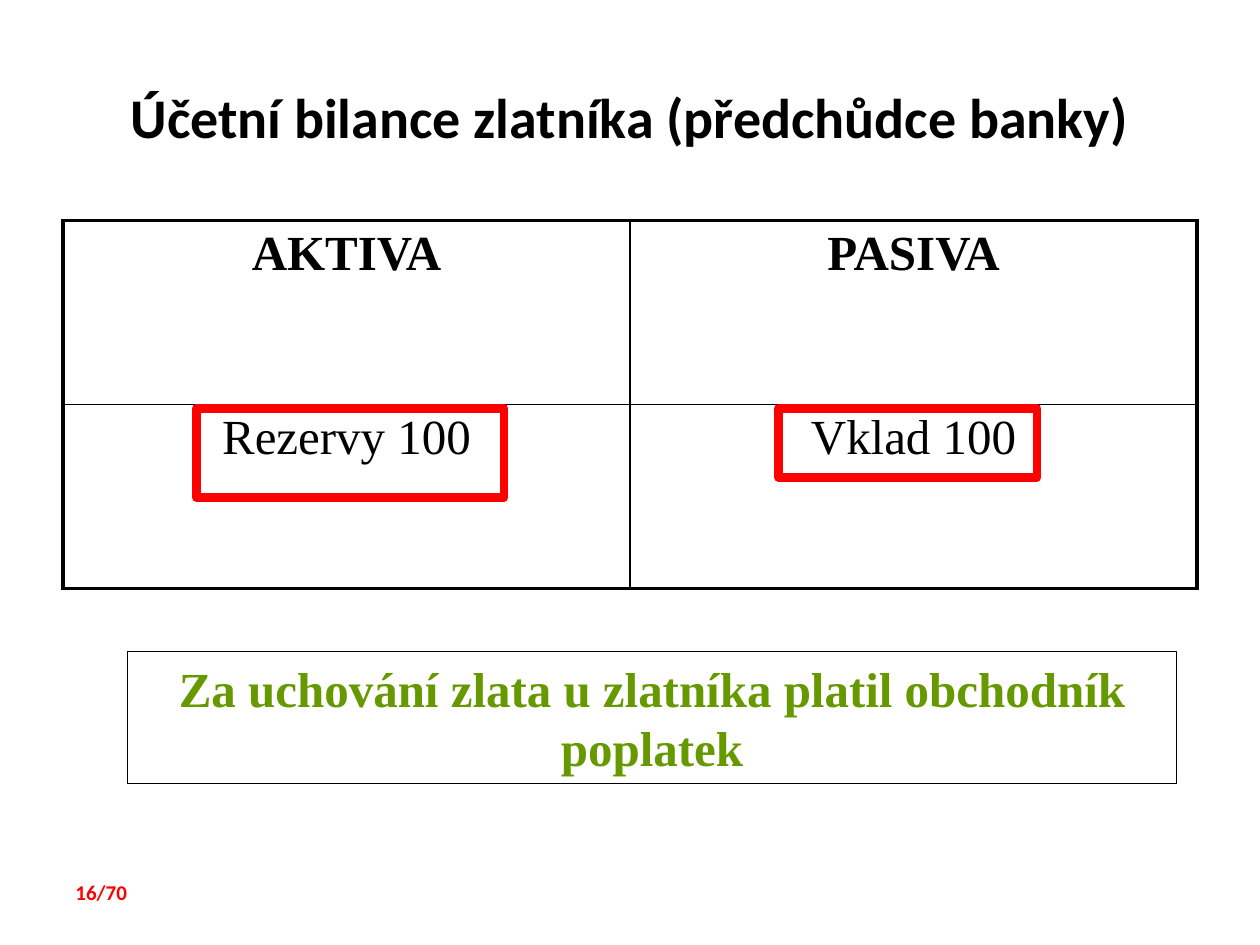
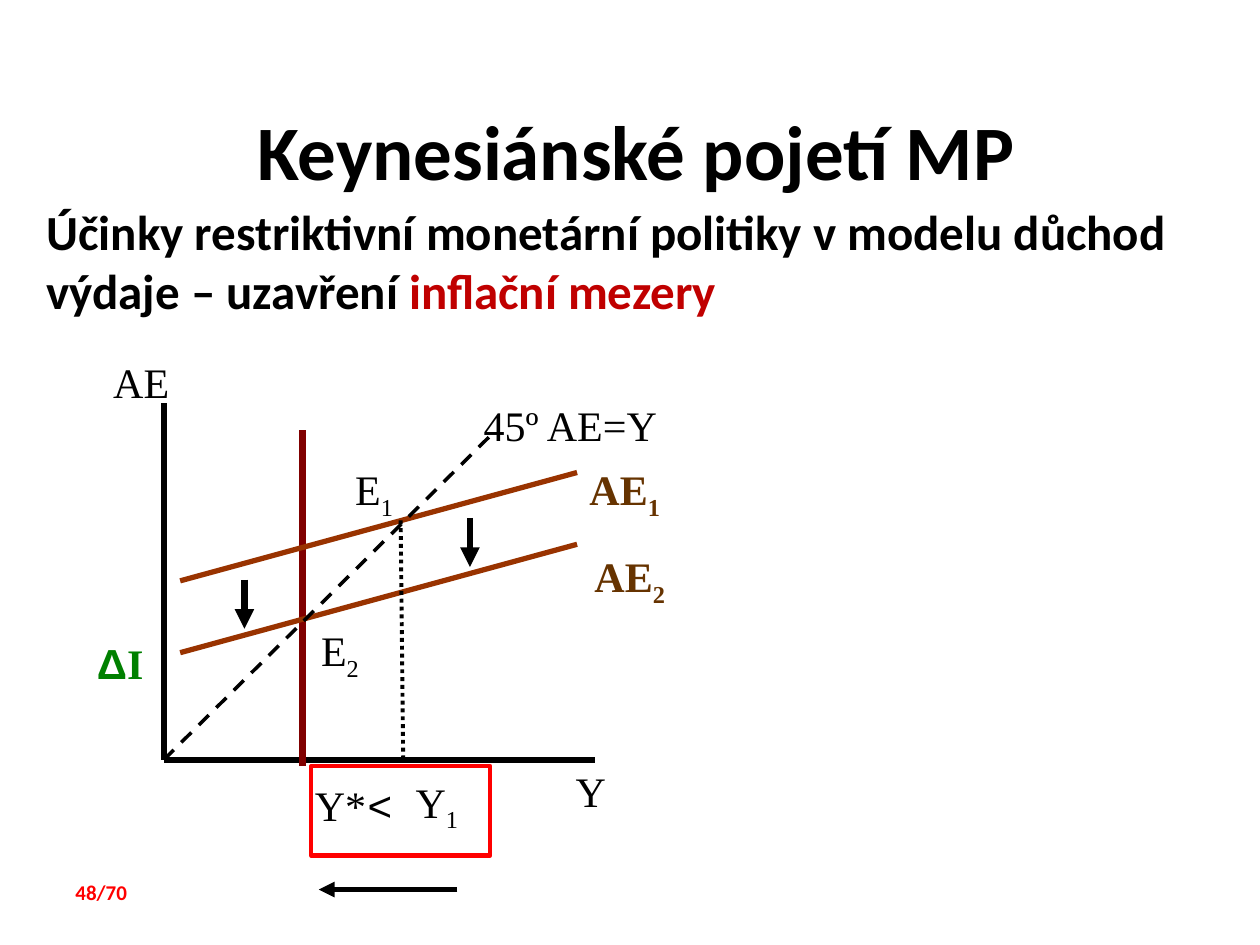
from dataclasses import dataclass

from pptx import Presentation
from pptx import util as u
from pptx.dml.color import RGBColor
from pptx.enum import dml, shapes, text
from pptx.oxml.ns import qn
from lxml import etree

SERIF, SANS, ARIAL = "Times New Roman", "Calibri", "Arial"
BLACK, RED, DARK_RED = "000000", "FF0000", "C00000"
GREEN, OLIVE, BROWN = "008000", "669900", "663300"
MAROON, RUST = "800000", "993300"
TOTAL_SLIDES = 70
CENTER = text.PP_ALIGN.CENTER


@dataclass
class Run:
    text: str
    size: float = 24
    font: str = SERIF
    color: str = BLACK
    bold: bool = False
    sub: bool = False


@dataclass
class Label:
    x: float
    y: float
    runs: list[Run]
    w: float = 0.92
    h: float = 0.5


@dataclass
class Line:
    x1: float
    y1: float
    x2: float
    y2: float
    width: float
    color: str = BLACK
    dash: dml.MSO_LINE | None = None
    arrow: bool = False


def rgb(color: str) -> RGBColor:
    return RGBColor.from_string(color)


def inches(*values: float) -> list[u.Length]:
    return [u.Inches(v) for v in values]


def write(tf, runs: list[Run], align=None) -> None:
    """Fill a text frame with one paragraph of formatted runs."""
    p = tf.paragraphs[0]
    p.alignment = align
    for run in runs:
        r = p.add_run()
        r.text = run.text
        r.font.size, r.font.name, r.font.bold = u.Pt(run.size), run.font, run.bold
        r.font.color.rgb = rgb(run.color)
        if run.sub:
            r.font._element.set("baseline", "-25000")


def add_label(s, label: Label, align=None, anchor=text.MSO_ANCHOR.TOP) -> None:
    sp = s.shapes.add_textbox(*inches(label.x, label.y, label.w, label.h))
    tf = sp.text_frame
    tf.word_wrap = True
    tf.vertical_anchor = anchor
    write(tf, label.runs, align)


def add_frame(s, x: float, y: float, w: float, h: float, color: str, width: float):
    """Unfilled outlined rectangle."""
    sp = s.shapes.add_shape(shapes.MSO_SHAPE.RECTANGLE, *inches(x, y, w, h))
    sp.shadow.inherit = False
    sp.fill.background()
    sp.line.color.rgb = rgb(color)
    sp.line.width = u.Pt(width)
    return sp


def add_line(s, line: Line) -> None:
    sp = s.shapes.add_connector(
        shapes.MSO_CONNECTOR.STRAIGHT, *inches(line.x1, line.y1, line.x2, line.y2))
    sp.line.color.rgb = rgb(line.color)
    sp.line.width = u.Pt(line.width)
    if line.dash:
        sp.line.dash_style = line.dash
    if line.arrow:
        etree.SubElement(sp.line._get_or_add_ln(), qn("a:tailEnd"), type="triangle")
    etree.SubElement(sp._element.spPr, qn("a:effectLst"))


def set_borders(cell, widths: dict[str, float]) -> None:
    """Black cell borders; the side elements go ahead of the fill."""
    tc_pr = cell._tc.get_or_add_tcPr()
    for i, (side, width) in enumerate(widths.items()):
        ln = etree.Element(qn(f"a:ln{side}"), w=str(u.Pt(width)))
        fill = etree.SubElement(ln, qn("a:solidFill"))
        etree.SubElement(fill, qn("a:srgbClr"), val=BLACK)
        tc_pr.insert(i, ln)


def add_slide(prs, number: int, title: str, size: float, x: float, y: float, w: float):
    """Blank slide with the shared title and page number."""
    s = prs.slides.add_slide(prs.slide_layouts[6])
    add_label(s, Label(x, y, [Run(title, size, SANS, bold=True)], w, 1.25),
              CENTER, text.MSO_ANCHOR.MIDDLE)
    page = Run(f"{number}/{TOTAL_SLIDES}", 12, SANS, RED, True)
    add_label(s, Label(0.5, 6.93, [page], h=0.3))
    return s


def balance_slide(prs) -> None:
    s = add_slide(prs, 16, "Účetní bilance zlatníka (předchůdce banky)", 32, 0.5, 0.3, 9)

    # Balance sheet: thick outside, thin inside
    rows = [["AKTIVA", "PASIVA"], ["Rezervy 100", "Vklad 100"]]
    thick, thin = 2.25, 1
    table = s.shapes.add_table(2, 2, *inches(0.5, 1.75, 9, 2.92)).table
    table.first_row = table.horz_banding = False
    for i, row in enumerate(rows):
        for j, entry in enumerate(row):
            cell = table.cell(i, j)
            cell.fill.background()
            write(cell.text_frame, [Run(entry, 28, bold=i == 0)], CENTER)
            set_borders(cell, {"L": thin if j else thick, "R": thick if j else thin,
                               "T": thin if i else thick, "B": thick if i else thin})

    # Highlights around the entries
    add_frame(s, 6.18, 3.24, 2.05, 0.55, RED, 5)
    add_frame(s, 1.56, 3.24, 2.44, 0.71, RED, 5)

    # Conclusion
    tf = add_frame(s, 1.01, 5.17, 8.33, 1.05, BLACK, 0.75).text_frame
    tf.word_wrap = True
    fee = "Za uchování zlata u zlatníka platil obchodník poplatek"
    write(tf, [Run(fee, 28, color=OLIVE, bold=True)], CENTER)


def indexed(name: str, index: int, color: str = BLACK, bold: bool = False) -> list[Run]:
    return [Run(name, color=color, bold=bold),
            Run(str(index), color=color, bold=bold, sub=True)]


def keynes_slide(prs) -> None:
    s = add_slide(prs, 48, "Keynesiánské pojetí MP", 44, 0.05, 0.56, 10)
    add_label(s, Label(0.27, 1.55, [
        Run("Účinky restriktivní monetární politiky v modelu důchod výdaje – uzavření ",
            28, SANS, bold=True),
        Run("inflační mezery", 28, SANS, DARK_RED, True)], 9.45, 1.05))

    # Axes, potential output, expenditure lines and shift arrows
    origin_x, origin_y = 1.3, 6.03
    shift, arrow_length = 0.57, 0.39
    lines = [
        Line(origin_x, 3.2, origin_x, origin_y, 3.5),
        Line(origin_x, origin_y, 4.72, origin_y, 3.5),
        Line(2.4, 6.08, 2.4, 3.41, 4, MAROON),
        *(Line(1.43, 4.61 + dy, 4.58, 3.75 + dy, 3, RUST) for dy in (0, shift)),
        Line(origin_x, origin_y, 3.91, 3.44, 2, dash=dml.MSO_LINE.DASH),
        Line(3.18, 4.13, 3.2, origin_y, 2.25, dash=dml.MSO_LINE.ROUND_DOT),
        *(Line(x, y, x, y + arrow_length, 3.75, arrow=True)
          for x, y in ((1.94, 4.6), (3.73, 4.11))),
        Line(3.63, 7.06, 2.53, 7.06, 3, arrow=True),
    ]
    for line in lines:
        add_line(s, line)
    add_frame(s, 2.47, 6.08, 1.42, 0.71, RED, 2.5)

    # Diagram labels
    labels = [
        Label(0.8, 2.78, [Run("AE")]),
        Label(4.47, 6.03, [Run("Y")]),
        Label(2.4, 6.14, [Run("Y*")]),
        Label(2.82, 6.14, [Run("<", font=ARIAL)], 0.55),
        Label(3.2, 6.11, indexed("Y", 1)),
        Label(4.58, 3.63, indexed("AE", 1, BROWN, True), 0.94),
        Label(4.62, 4.32, indexed("AE", 2, BROWN, True), 0.94),
        Label(2.72, 3.63, indexed("E", 1)),
        Label(2.45, 4.91, indexed("E", 2)),
        Label(3.74, 3.12, [Run("45º AE=Y")], 2.44),
        Label(0.67, 5.01, [Run("Δ", font=ARIAL, color=GREEN, bold=True),
                           Run("I", color=GREEN, bold=True)]),
    ]
    for label in labels:
        add_label(s, label)


def main() -> None:
    prs = Presentation()
    prs.slide_width, prs.slide_height = inches(10, 7.5)
    balance_slide(prs)
    keynes_slide(prs)
    prs.save("out.pptx")


if __name__ == "__main__":
    main()
